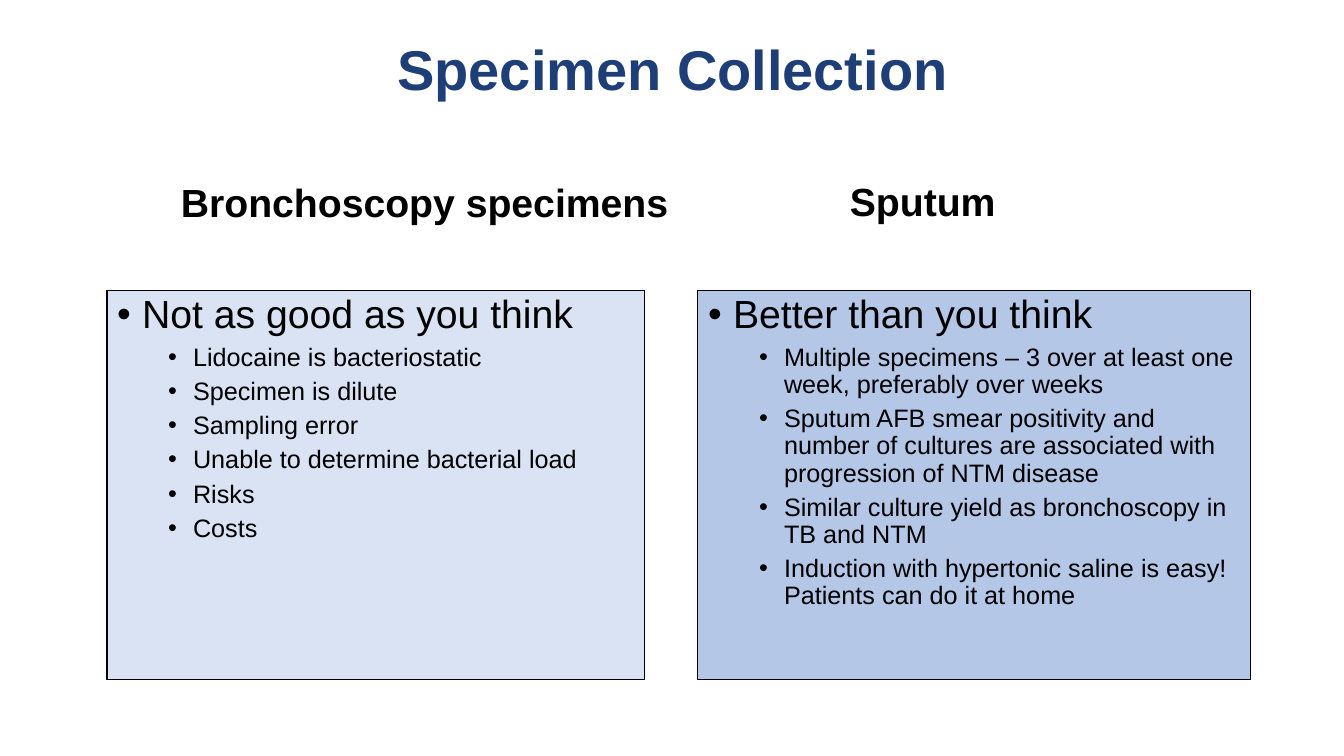
from lxml.etree import SubElement
from pptx import Presentation
from pptx.dml.color import RGBColor
from pptx.enum.text import MSO_ANCHOR as Anchor, MSO_AUTO_SIZE as AutoSize, PP_ALIGN as Align
from pptx.oxml.ns import qn
from pptx.util import Pt

PX = 914400 / 100.8
TWO_CONTENT = 3
FONT = "Arial"
NAVY = RGBColor(0x1E, 0x3E, 0x78)
BLACK = RGBColor(0x00, 0x00, 0x00)
PALE_BLUE = RGBColor(0xDA, 0xE3, 0xF3)
LIGHT_BLUE = RGBColor(0xB4, 0xC7, 0xE7)

BRONCHOSCOPY = (
    "Not as good as you think",
    [
        "Lidocaine is bacteriostatic",
        "Specimen is dilute",
        "Sampling error",
        "Unable to determine bacterial load",
        "Risks",
        "Costs",
    ],
)
SPUTUM = (
    "Better than you think",
    [
        "Multiple specimens – 3 over at least one week, preferably over weeks",
        "Sputum AFB smear positivity and number of cultures are associated with "
        "progression of NTM disease",
        "Similar culture yield as bronchoscopy in TB and NTM",
        "Induction with hypertonic saline is easy! Patients can do it at home",
    ],
)


def px(length):
    """Turn a length in px into EMU."""
    return round(length * PX)


def place(shape, box):
    """Move a shape to a box given as left, top, width, height."""
    shape.left, shape.top, shape.width, shape.height = map(px, box)


def write(paragraph, text, size=28, color=BLACK, bold=False, align=Align.LEFT,
          spacing=None, before=0):
    """Put one formatted run of text into a paragraph."""
    paragraph.alignment = align
    paragraph.line_spacing = spacing
    paragraph.space_before = Pt(before)
    run = paragraph.add_run()
    run.text = text
    run.font.name = FONT
    run.font.size = Pt(size)
    run.font.bold = bold
    run.font.color.rgb = color


def add_bullet(paragraph, margin, hanging=25):
    """Give a paragraph a round bullet with a hanging indent."""
    properties = paragraph._p.get_or_add_pPr()
    properties.set("marL", str(px(margin)))
    properties.set("indent", str(-px(hanging)))
    SubElement(properties, qn("a:buFont"), typeface=FONT)
    SubElement(properties, qn("a:buChar"), char="•")


def fill_title(shape, text, box):
    """Place the slide title and write it."""
    place(shape, box)
    frame = shape.text_frame
    frame.auto_size = AutoSize.NONE
    frame.vertical_anchor = Anchor.MIDDLE
    write(frame.paragraphs[0], text, size=40, color=NAVY, bold=True,
          align=Align.CENTER, spacing=0.9)


def add_heading(slide, text, box, wrap):
    """Add the bold heading above a panel."""
    shape = slide.shapes.add_textbox(*map(px, box))
    frame = shape.text_frame
    frame.word_wrap = wrap
    frame.auto_size = AutoSize.SHAPE_TO_FIT_TEXT
    write(frame.paragraphs[0], text, bold=True)


def fill_panel(shape, content, box, color):
    """Turn a body placeholder into a coloured panel with a bulleted list."""
    place(shape, box)
    shape.fill.solid()
    shape.fill.fore_color.rgb = color
    shape.line.color.rgb = BLACK
    shape.line.width = Pt(0.75)
    frame = shape.text_frame
    frame.auto_size = AutoSize.NONE
    frame.vertical_anchor = Anchor.TOP
    claim, points = content
    add_bullet(frame.paragraphs[0], 25)
    write(frame.paragraphs[0], claim, spacing=0.9)
    for point in points:
        paragraph = frame.add_paragraph()
        paragraph.level = 1
        add_bullet(paragraph, 76)
        write(paragraph, point, size=18, spacing=0.9, before=5)


def build_comparison(presentation):
    """Build the slide that compares the two kinds of specimen."""
    slide = presentation.slides.add_slide(presentation.slide_layouts[TWO_CONTENT])
    title, left_panel, right_panel = list(slide.placeholders)[:3]
    for unused in list(slide.placeholders)[3:]:
        unused.element.getparent().remove(unused.element)
    fill_title(title, "Specimen Collection", (93, 15, 1159, 115))
    fill_panel(left_panel, BRONCHOSCOPY, (107, 290, 538, 390), PALE_BLUE)
    fill_panel(right_panel, SPUTUM, (698, 290, 553, 390), LIGHT_BLUE)
    add_heading(slide, "Bronchoscopy specimens", (171, 173, 514, 57), wrap=False)
    add_heading(slide, "Sputum", (840, 172, 180, 57), wrap=True)


def main():
    """Create the presentation and save it."""
    presentation = Presentation()
    presentation.slide_width = px(1344)
    presentation.slide_height = px(756)
    build_comparison(presentation)
    presentation.save("out.pptx")


if __name__ == "__main__":
    main()
